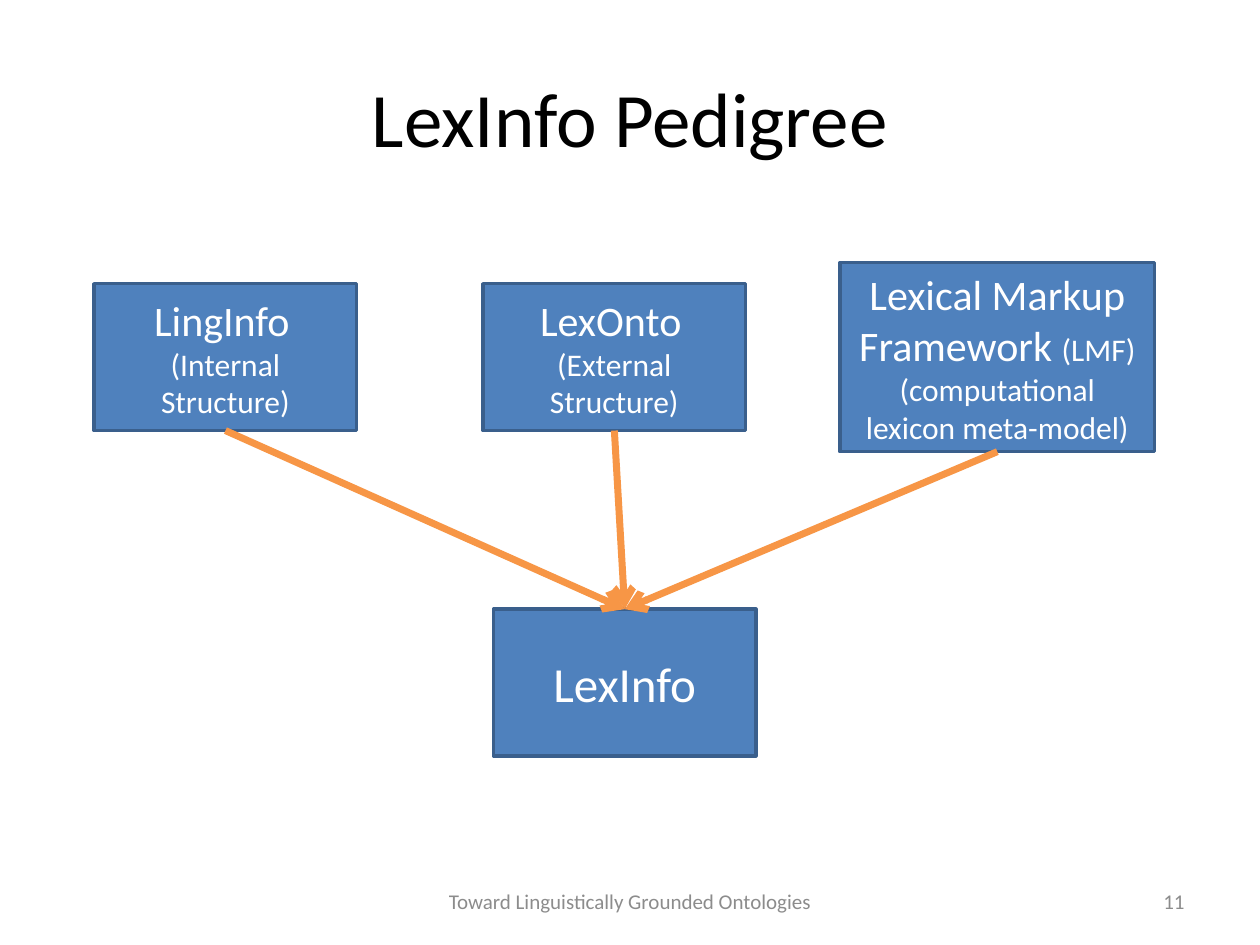
from dataclasses import dataclass

from lxml import etree
from pptx import Presentation
from pptx.dml.color import RGBColor
from pptx.enum.shapes import MSO_CONNECTOR, MSO_SHAPE
from pptx.enum.text import MSO_ANCHOR, PP_ALIGN
from pptx.oxml.ns import qn
from pptx.util import Cm, Pt

RECTANGLE = MSO_SHAPE.RECTANGLE
STRAIGHT = MSO_CONNECTOR.STRAIGHT
MIDDLE = MSO_ANCHOR.MIDDLE
CENTER = PP_ALIGN.CENTER
RIGHT = PP_ALIGN.RIGHT
TITLE_ONLY = 5
TOP_SIDE, BOTTOM_SIDE = 0, 2


@dataclass(frozen=True)
class Theme:
    font: str = "Calibri"
    ink: RGBColor = RGBColor(0x00, 0x00, 0x00)
    box_text: RGBColor = RGBColor(0xFF, 0xFF, 0xFF)
    box_fill: RGBColor = RGBColor(0x4F, 0x81, 0xBD)
    box_line: RGBColor = RGBColor(0x3A, 0x5F, 0x8C)
    arrow: RGBColor = RGBColor(0xF7, 0x96, 0x46)
    footer: RGBColor = RGBColor(0x8C, 0x8C, 0x8C)
    title_size: int = 44
    result_size: int = 28
    name_size: int = 24
    detail_size: int = 18
    footer_size: int = 12
    box_line_width: int = 2
    arrow_width: int = 4


THEME = Theme()
BOX_SIZE = (5.29, 2.96)
LMF_SIZE = (6.35, 3.81)
SOURCE_MIDDLE = 7.2
NAME, DETAIL = THEME.name_size, THEME.detail_size

SOURCES = [
    (1.9, BOX_SIZE, [[("LingInfo", NAME), (" ", DETAIL)],
                     [("(Internal Structure)", DETAIL)]]),
    (9.74, BOX_SIZE, [[("LexOnto", NAME), (" ", DETAIL)],
                      [("(External Structure)", DETAIL)]]),
    (16.93, LMF_SIZE, [[("Lexical Markup Framework ", NAME),
                        ("(LMF) (computational lexicon meta-model)", DETAIL)]]),
]


def style_paragraph(paragraph, color, align, size=None):
    paragraph.alignment = align
    paragraph.font.name = THEME.font
    paragraph.font.color.rgb = color
    if size:
        paragraph.font.size = Pt(size)


def set_title(slide, text):
    title = slide.shapes.title
    title.left, title.top = Cm(1.27), Cm(0.76)
    title.width, title.height = Cm(22.86), Cm(3.18)
    title.text_frame.text = text
    title.text_frame.vertical_anchor = MIDDLE
    style_paragraph(title.text_frame.paragraphs[0], THEME.ink, CENTER, THEME.title_size)


def add_box(slide, left, top, size, lines):
    width, height = size
    box = slide.shapes.add_shape(RECTANGLE, Cm(left), Cm(top), Cm(width), Cm(height))
    box.shadow.inherit = False
    box.fill.solid()
    box.fill.fore_color.rgb = THEME.box_fill
    box.line.color.rgb = THEME.box_line
    box.line.width = Pt(THEME.box_line_width)
    frame = box.text_frame
    frame.word_wrap = True
    frame.vertical_anchor = MIDDLE
    for index, pieces in enumerate(lines):
        paragraph = frame.add_paragraph() if index else frame.paragraphs[0]
        shared_size = pieces[0][1] if len(pieces) == 1 else None
        style_paragraph(paragraph, THEME.box_text, CENTER, shared_size)
        for text, points in pieces:
            run = paragraph.add_run()
            run.text = text
            if not shared_size:
                run.font.size = Pt(points)
    return box


def add_arrow(slide, source, target):
    arrow = slide.shapes.add_connector(STRAIGHT, 0, 0, 0, 0)
    arrow.begin_connect(source, BOTTOM_SIDE)
    arrow.end_connect(target, TOP_SIDE)
    arrow.line.color.rgb = THEME.arrow
    arrow.line.width = Pt(THEME.arrow_width)
    etree.SubElement(arrow.line._get_or_add_ln(), qn("a:tailEnd"), type="arrow")
    etree.SubElement(arrow._element.spPr, qn("a:effectLst"))


def add_footer(slide, left, width, text, align):
    footer = slide.shapes.add_textbox(Cm(left), Cm(17.65), Cm(width), Cm(1.02))
    frame = footer.text_frame
    frame.word_wrap = True
    frame.vertical_anchor = MIDDLE
    frame.text = text
    style_paragraph(frame.paragraphs[0], THEME.footer, align, THEME.footer_size)


def main():
    deck = Presentation()
    deck.slide_width, deck.slide_height = Cm(25.4), Cm(19.05)
    slide = deck.slides.add_slide(deck.slide_layouts[TITLE_ONLY])

    set_title(slide, "LexInfo Pedigree")
    lexinfo = add_box(slide, 9.95, 12.28, BOX_SIZE, [[("LexInfo", THEME.result_size)]])
    sources = [add_box(slide, left, SOURCE_MIDDLE - size[1] / 2, size, lines)
               for left, size, lines in SOURCES]
    for source in sources:
        add_arrow(slide, source, lexinfo)
    add_footer(slide, 18.2, 5.93, "11", RIGHT)
    add_footer(slide, 8.68, 8.04, "Toward Linguistically Grounded Ontologies", CENTER)

    deck.save("out.pptx")


if __name__ == "__main__":
    main()
